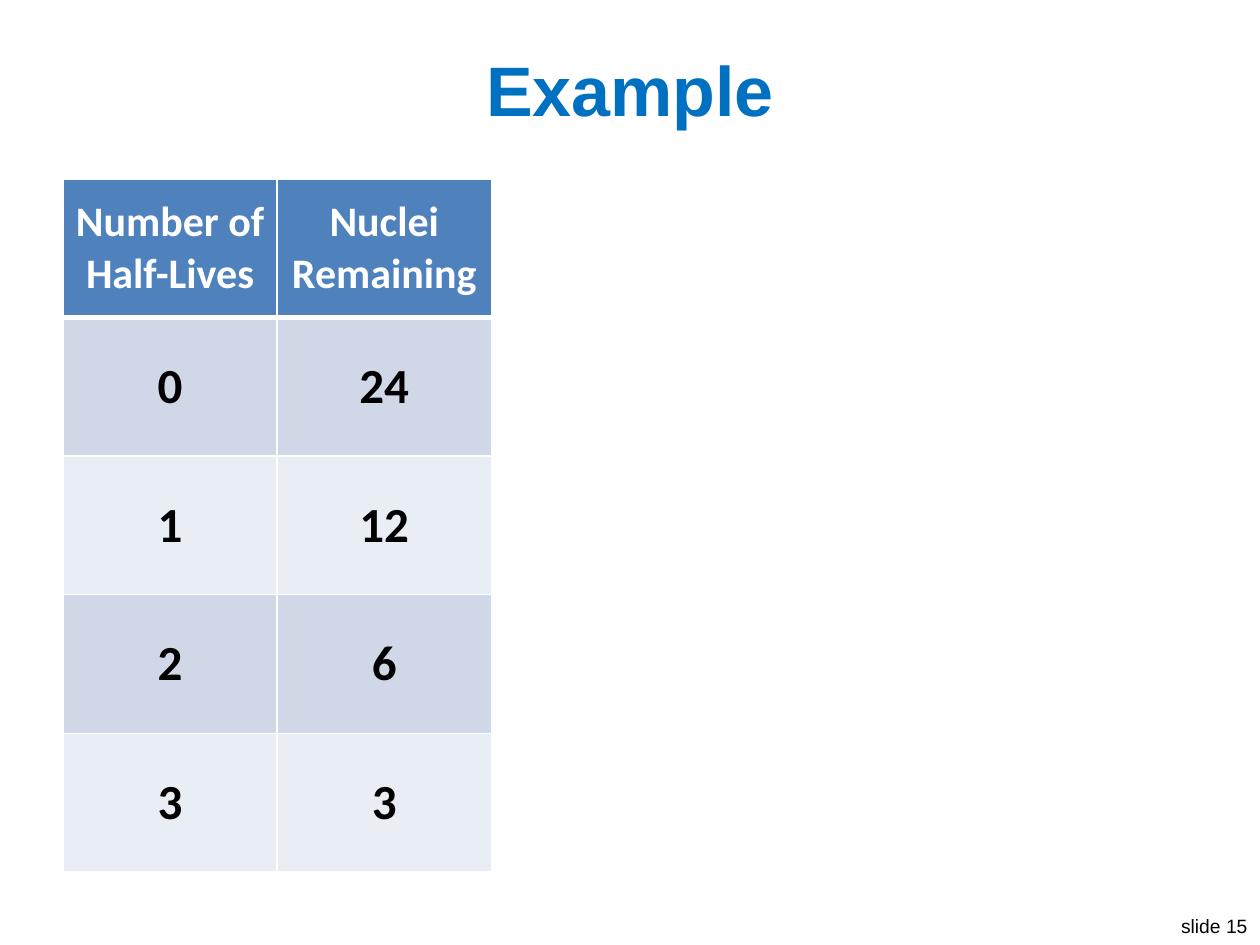
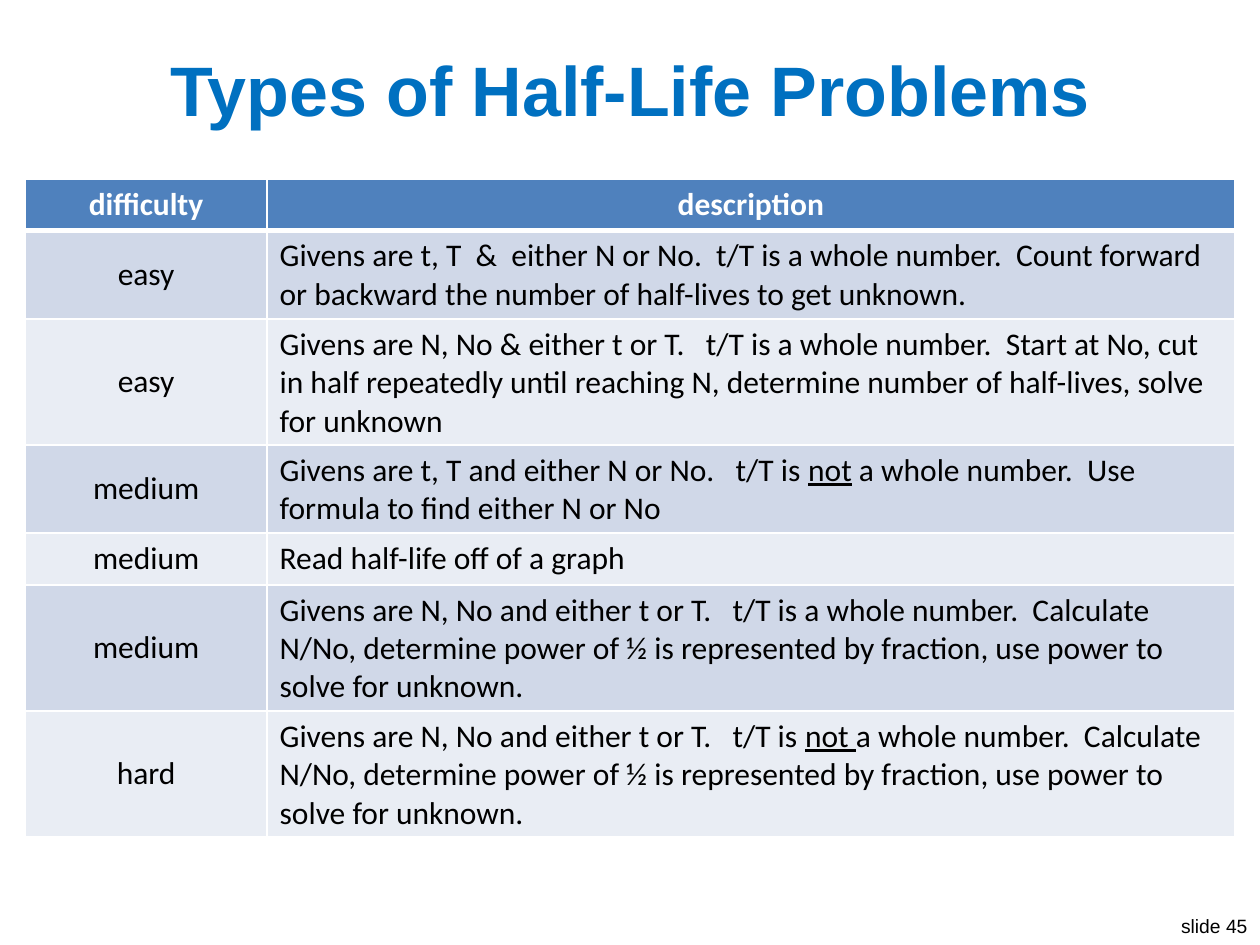
import pptx
import pptx.util
import pptx.dml.color
import pptx.enum.text
import pptx.oxml

Inches = pptx.util.Inches
Pt = pptx.util.Pt
Align = pptx.enum.text.PP_ALIGN
Anchor = pptx.enum.text.MSO_ANCHOR

WIDE, HIGH = 10, 7.5
TOP = 1.42
COLORS = {
    "title": "0070C0",
    "head": "4F81BD",
    "odd": "D0D8E8",
    "even": "E9EDF4",
    "light": "FFFFFF",
    "dark": "000000",
}

# Words between underscores are underlined.
SLIDES = [
    {
        "title": "Example",
        "number": 15,
        "left": 0.5,
        "cols": [1.7, 1.7],
        "row": 1.1,
        "sizes": (24, 28),
        "bold": True,
        "aligns": [Align.CENTER, Align.CENTER],
        "rows": [
            ("Number of Half-Lives", "Nuclei Remaining"),
            ("0", "24"),
            ("1", "12"),
            ("2", "6"),
            ("3", "3"),
        ],
    },
    {
        "title": "Types of Half-Life Problems",
        "number": 45,
        "left": 0.2,
        "cols": [1.92, 7.68],
        "row": 0.41,
        "sizes": (18, 18),
        "bold": False,
        "aligns": [Align.CENTER, Align.LEFT],
        "rows": [
            ("difficulty", "description"),
            ("easy", "Givens are t, T  &  either N or No.  t/T is a whole number.  "
             "Count forward or backward the number of half-lives to get unknown."),
            ("easy", "Givens are N, No & either t or T.   t/T is a whole number.  "
             "Start at No, cut in half repeatedly until reaching N, "
             "determine number of half-lives, solve for unknown"),
            ("medium", "Givens are t, T and either N or No.   t/T is _not_ a whole number.  "
             "Use formula to find either N or No"),
            ("medium", "Read half-life off of a graph"),
            ("medium", "Givens are N, No and either t or T.   t/T is a whole number.  "
             "Calculate N/No, determine power of ½ is represented by fraction, "
             "use power to solve for unknown."),
            ("hard", "Givens are N, No and either t or T.   t/T is _not _a whole number.  "
             "Calculate N/No, determine power of ½ is represented by fraction, "
             "use power to solve for unknown."),
        ],
    },
]


def rgb(name):
    return pptx.dml.color.RGBColor.from_string(COLORS[name])


def write(frame, text, size, color, face, align, bold=False):
    """Fill the first paragraph, underlining every second piece."""
    para = frame.paragraphs[0]
    para.alignment = align
    for i, piece in enumerate(text.split("_")):
        run = para.add_run()
        run.text = piece
        font = run.font
        font.name, font.size, font.bold = face, Pt(size), bold
        font.color.rgb = rgb(color)
        if i % 2:
            font.underline = True


def place(shape, left, top, width, height):
    shape.left, shape.top = Inches(left), Inches(top)
    shape.width, shape.height = Inches(width), Inches(height)


def edge(cell, head):
    """Draw white cell borders, thicker below the header."""
    props = cell._tc.get_or_add_tcPr()
    for side in "LRTB":
        width = Pt(3 if head and side == "B" else 1)
        props.append(pptx.oxml.parse_xml(
            f'<a:ln{side} xmlns:a="http://schemas.openxmlformats.org/drawingml/2006/main" '
            f'w="{width}"><a:solidFill><a:srgbClr val="{COLORS["light"]}"/>'
            f'</a:solidFill></a:ln{side}>'))


def add_title(slide, text):
    title = slide.shapes.title
    place(title, 0.2, 0.3, WIDE - 0.4, 0.8)
    title.text_frame.vertical_anchor = Anchor.MIDDLE
    write(title.text_frame, text, 40, "title", "Arial", Align.CENTER, True)


def add_number(slide, number):
    width, height = 0.75, 0.29
    box = slide.shapes.add_textbox(0, 0, 0, 0)
    place(box, WIDE - width, HIGH - height, width, height)
    box.text_frame.word_wrap = False
    write(box.text_frame, f"slide {number}", 11, "dark", "Arial", Align.RIGHT)


def add_grid(slide, data):
    rows, cols = data["rows"], data["cols"]
    grid = slide.shapes.add_table(
        len(rows), len(cols), Inches(data["left"]), Inches(TOP),
        Inches(sum(cols)), Inches(data["row"] * len(rows))).table
    for col, width in zip(grid.columns, cols):
        col.width = Inches(width)
    for r, texts in enumerate(rows):
        head = r == 0
        grid.rows[r].height = Inches(data["row"])
        fill = "head" if head else "odd" if r % 2 else "even"
        for c, text in enumerate(texts):
            cell = grid.cell(r, c)
            edge(cell, head)
            cell.fill.solid()
            cell.fill.fore_color.rgb = rgb(fill)
            cell.vertical_anchor = Anchor.MIDDLE
            write(cell.text_frame, text, data["sizes"][0 if head else 1],
                  "light" if head else "dark", "Calibri",
                  Align.CENTER if head else data["aligns"][c],
                  head or data["bold"])


def main():
    deck = pptx.Presentation()
    deck.slide_width, deck.slide_height = Inches(WIDE), Inches(HIGH)
    for data in SLIDES:
        slide = deck.slides.add_slide(deck.slide_layouts[5])
        add_number(slide, data["number"])
        add_title(slide, data["title"])
        add_grid(slide, data)
    deck.save("out.pptx")


if __name__ == "__main__":
    main()
